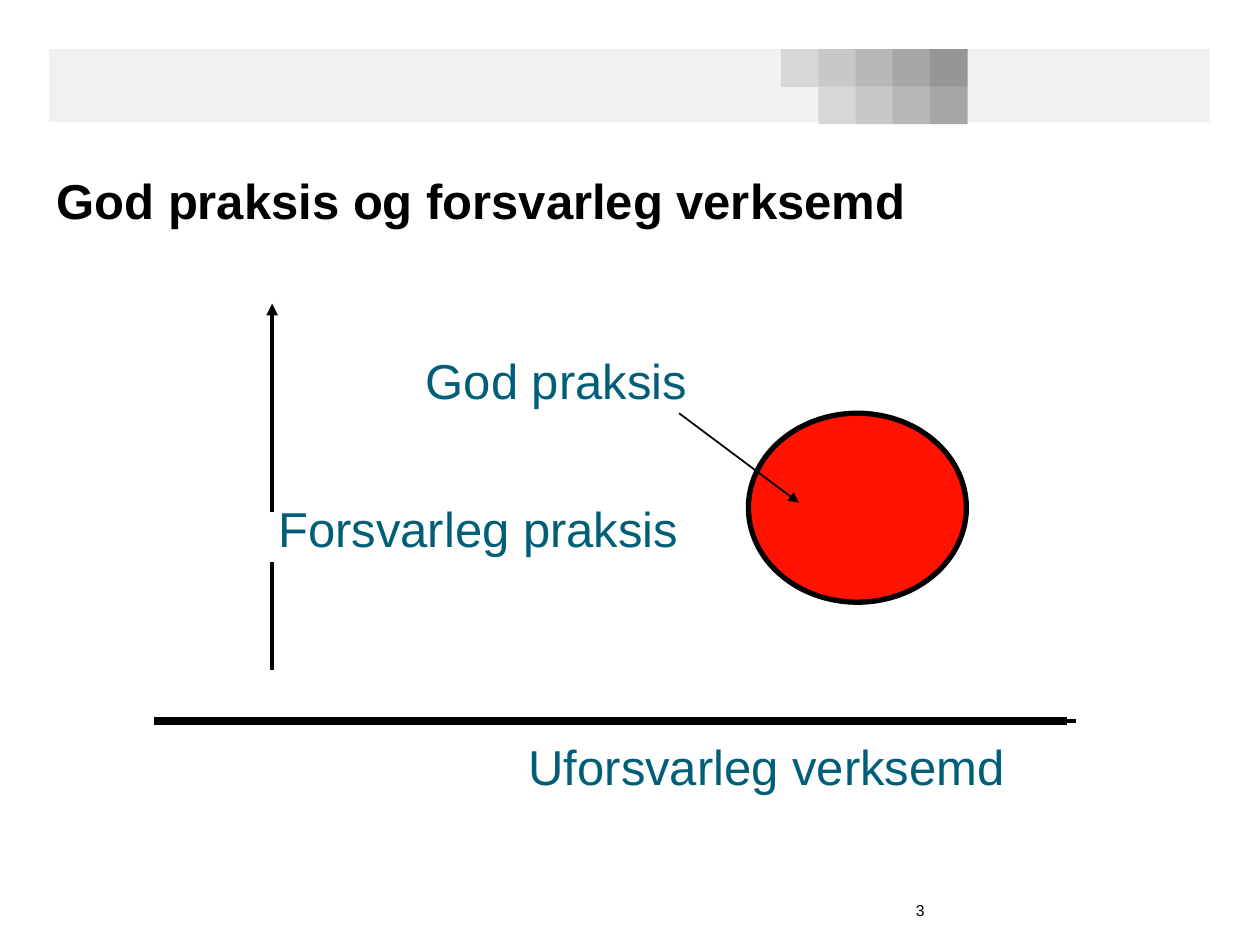
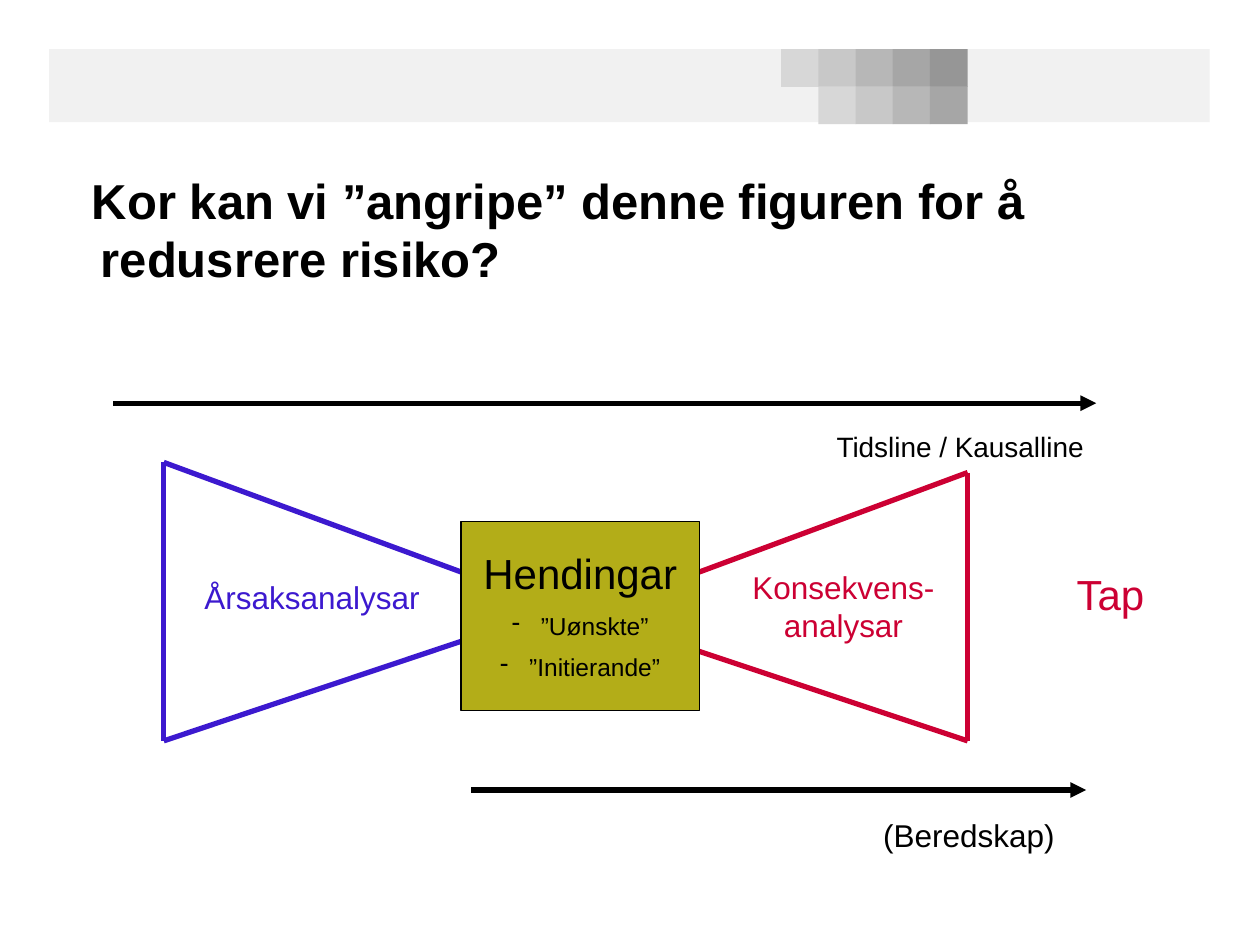
from dataclasses import dataclass
from itertools import pairwise

from lxml.etree import SubElement
from pptx import Presentation
from pptx.dml.color import RGBColor
from pptx.enum.shapes import MSO_CONNECTOR, MSO_SHAPE
from pptx.enum.text import MSO_ANCHOR, MSO_AUTO_SIZE, PP_ALIGN
from pptx.oxml.ns import qn
from pptx.util import Inches, Pt


@dataclass(frozen=True)
class Theme:
    font: str = "Arial"
    black: str = "000000"
    teal: str = "005E78"
    red: str = "FF1300"
    blue: str = "3C19CF"
    crimson: str = "CC0033"
    olive: str = "B3AD18"
    band: str = "F1F1F1"
    tiles: tuple = ("D7D7D7", "C8C8C8", "B7B7B7", "A6A6A6", "969696")
    heading: int = 28
    large: int = 24
    label: int = 18
    caption: int = 16
    item: int = 14
    number: int = 9


THEME = Theme()
COLUMNS, ROWS = 100, 75
CELL = Inches(10) / COLUMNS

BAND = (3.9, 3.9, 92.1, 5.8)
TILE_START, TILE_STEP, TILE_SIZE = 62, 2.95, 3
BULLET_INDENT = 2.3

PRACTICE = {
    "title": "God praksis og forsvarleg verksemd",
    "title_box": (3.5, 13.1, 70.2, 5.5),
    "circle": (59.4, 32.8, 17.3, 15),
    "labels": [
        ("God praksis", (29.5, 27.3, 26, 5.7)),
        ("Uforsvarleg verksemd", (31.9, 58, 48.8, 5.7)),
        ("Forsvarleg praksis", (13.8, 39.1, 41, 5.7)),
    ],
    "lines": [
        ((53.9, 32.8), (63.4, 39.9), 1, True),
        ((12.2, 57.2), (85.4, 57.2), 2.25, False),
        ((12.2, 57.2), (84.7, 57.2), 4.5, False),
        ((21.6, 53.2), (21.6, 44.6), 2.25, False),
        ((21.6, 40.6), (21.6, 24.1), 2.25, True),
    ],
    "number": ("3", (71.7, 68.3, 23.3, 5.2)),
}

RISK = {
    "title": "Kor kan vi ”angripe” denne figuren for å redusrere risiko?",
    "title_box": (5.1, 13, 90, 11),
    "title_hang": (1.9, -0.7),
    "funnels": [
        (THEME.blue, [(36.6, 45.4), (13, 36.7), (13, 58.8), (36.6, 50.9)]),
        (THEME.crimson, [(55.5, 45.4), (76.8, 37.5), (76.8, 58.8), (55.5, 51.7)]),
    ],
    "event_box": (36.6, 41.4, 18.9, 15),
    "event_text": (36.6, 43, 18.9, 12),
    "events": ["Hendingar", "”Uønskte”", "”Initierande”"],
    "timelines": [((9, 32), (87, 32)), ((37.4, 62.7), (86.2, 62.7))],
    "labels": [
        ("Tidsline / Kausalline", (35.8, 33.6, 51.2, 3.7), THEME.caption, THEME.black, PP_ALIGN.RIGHT),
        ("Årsaksanalysar", (13, 45.4, 21.3, 4), THEME.label, THEME.blue, PP_ALIGN.RIGHT),
        ("Konsekvens-analysar", (57.1, 44.6, 19.7, 7), THEME.label, THEME.crimson, PP_ALIGN.CENTER),
        ("Tap", (78.4, 44.6, 13.4, 5.1), THEME.large, THEME.crimson, PP_ALIGN.RIGHT),
        ("(Beredskap)", (51.6, 64.3, 33.1, 4), THEME.label, THEME.black, PP_ALIGN.RIGHT),
    ],
}


def grid(lengths):
    return [round(length * CELL) for length in lengths]


def format_paragraph(paragraph, size, color, align, bold=False):
    paragraph.alignment = align
    for run in paragraph.runs:
        run.font.name = THEME.font
        run.font.size = Pt(size)
        run.font.bold = bold
        run.font.color.rgb = RGBColor.from_string(color)


def set_hanging(paragraph, margin, indent):
    properties = paragraph._p.get_or_add_pPr()
    margin, indent = grid((margin, indent))
    properties.set("marL", str(margin))
    properties.set("indent", str(indent))
    return properties


def add_label(slide, text, box, size, color, align=PP_ALIGN.RIGHT, anchor=MSO_ANCHOR.TOP):
    frame = slide.shapes.add_textbox(*grid(box)).text_frame
    frame.word_wrap = True
    frame.vertical_anchor = anchor
    frame.text = text
    for paragraph in frame.paragraphs:
        format_paragraph(paragraph, size, color, align)
    return frame


def add_figure(slide, kind, box, fill, line_width=0):
    shape = slide.shapes.add_shape(kind, *grid(box))
    shape.shadow.inherit = False
    shape.fill.solid()
    shape.fill.fore_color.rgb = RGBColor.from_string(fill)
    if line_width:
        shape.line.color.rgb = RGBColor.from_string(THEME.black)
        shape.line.width = Pt(line_width)
    else:
        shape.line.fill.background()


def add_line(slide, start, end, width, arrow=False, color=THEME.black):
    connector = slide.shapes.add_connector(MSO_CONNECTOR.STRAIGHT, *grid(start + end))
    connector.line.color.rgb = RGBColor.from_string(color)
    connector.line.width = Pt(width)
    properties = connector.element.spPr
    if arrow:
        SubElement(properties.find(qn("a:ln")), qn("a:tailEnd"), type="triangle")
    SubElement(properties, qn("a:effectLst"))


def add_band(slide):
    add_figure(slide, MSO_SHAPE.RECTANGLE, BAND, THEME.band)
    for row in range(2):
        for column in range(row, len(THEME.tiles)):
            left = TILE_START + column * TILE_STEP
            top = BAND[1] + row * TILE_STEP
            box = (left, top, TILE_SIZE, TILE_SIZE)
            add_figure(slide, MSO_SHAPE.RECTANGLE, box, THEME.tiles[column - row])


def add_titled_slide(presentation, content, anchor):
    slide = presentation.slides.add_slide(presentation.slide_layouts[5])
    add_band(slide)
    title = slide.shapes.title
    title.left, title.top, title.width, title.height = grid(content["title_box"])
    frame = title.text_frame
    frame.text = content["title"]
    frame.word_wrap = True
    frame.auto_size = MSO_AUTO_SIZE.NONE
    frame.vertical_anchor = anchor
    paragraph = frame.paragraphs[0]
    format_paragraph(paragraph, THEME.heading, THEME.black, PP_ALIGN.LEFT, bold=True)
    if "title_hang" in content:
        set_hanging(paragraph, *content["title_hang"])
    return slide


def build_practice(presentation):
    slide = add_titled_slide(presentation, PRACTICE, MSO_ANCHOR.MIDDLE)
    add_figure(slide, MSO_SHAPE.OVAL, PRACTICE["circle"], THEME.red, 3)
    for text, box in PRACTICE["labels"]:
        add_label(slide, text, box, THEME.heading, THEME.teal)
    for line in PRACTICE["lines"]:
        add_line(slide, *line)
    add_label(slide, *PRACTICE["number"], THEME.number, THEME.black, PP_ALIGN.LEFT, MSO_ANCHOR.BOTTOM)


def build_risk(presentation):
    slide = add_titled_slide(presentation, RISK, MSO_ANCHOR.TOP)
    for color, points in RISK["funnels"]:
        for start, end in pairwise(points):
            add_line(slide, start, end, 3, color=color)
    add_figure(slide, MSO_SHAPE.RECTANGLE, RISK["event_box"], THEME.olive, 0.75)
    frame = add_label(slide, "\n".join(RISK["events"]), RISK["event_text"],
                      THEME.large, THEME.black, PP_ALIGN.CENTER)
    for paragraph in frame.paragraphs[1:]:
        properties = set_hanging(paragraph, BULLET_INDENT, -BULLET_INDENT)
        SubElement(properties, qn("a:buChar"), char="-")
        paragraph.space_before = Pt(THEME.item / 2)
        format_paragraph(paragraph, THEME.item, THEME.black, PP_ALIGN.CENTER)
    for start, end in RISK["timelines"]:
        add_line(slide, start, end, 3, arrow=True)
    for label in RISK["labels"]:
        add_label(slide, *label)


def main():
    presentation = Presentation()
    presentation.slide_width, presentation.slide_height = grid((COLUMNS, ROWS))
    build_practice(presentation)
    build_risk(presentation)
    presentation.save("out.pptx")


if __name__ == "__main__":
    main()
